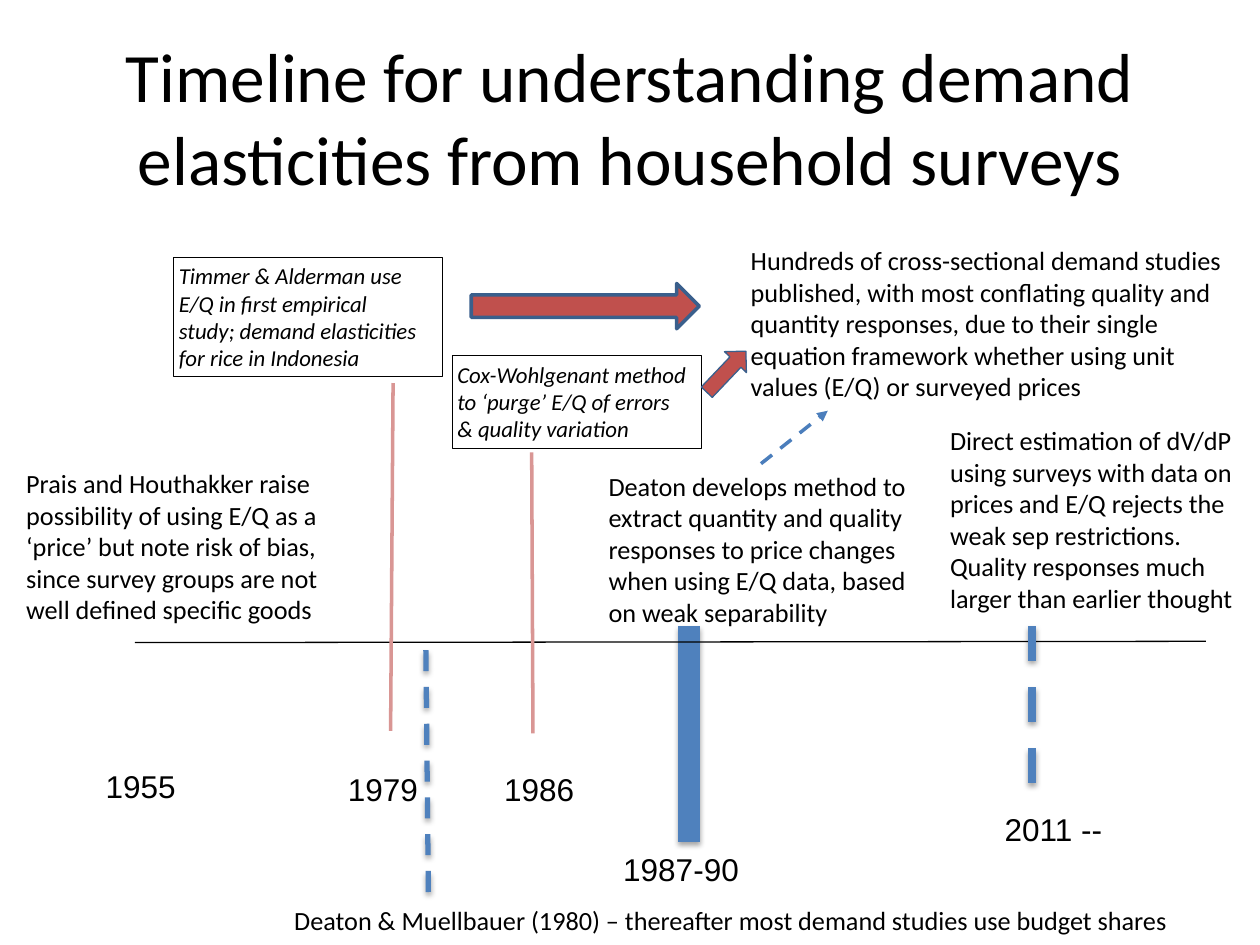
"""Build a timeline slide on demand elasticities from household surveys."""
from dataclasses import dataclass
from typing import Optional

from lxml.etree import SubElement
from pptx import Presentation
from pptx.dml.color import RGBColor
from pptx.enum.dml import MSO_LINE
from pptx.enum.shapes import MSO_CONNECTOR, MSO_SHAPE
from pptx.enum.text import MSO_ANCHOR, MSO_AUTO_SIZE, PP_ALIGN
from pptx.oxml.ns import qn
from pptx.slide import Slide
from pptx.util import Inches, Pt

BLACK = RGBColor(0x00, 0x00, 0x00)
BLUE = RGBColor(0x4F, 0x81, 0xBD)
ARROW_BLUE = RGBColor(0x4B, 0x7E, 0xBC)
OUTLINE_BLUE = RGBColor(0x3A, 0x5F, 0x8C)
RED = RGBColor(0xC0, 0x50, 0x4D)
PINK = RGBColor(0xD9, 0x96, 0x94)


@dataclass
class Label:
    text: str
    left: float
    top: float
    width: float
    height: float
    size: float = 15
    font: str = "Calibri"
    align: PP_ALIGN = PP_ALIGN.LEFT
    anchor: MSO_ANCHOR = MSO_ANCHOR.TOP
    side_margin: float = 0.1
    end_margin: float = 0.05
    wrap: bool = True
    grow: bool = True
    boxed: bool = False


@dataclass
class Line:
    start: tuple[float, float]
    end: tuple[float, float]
    color: RGBColor
    width: float
    dashed: bool = False
    shadow: bool = False
    arrowhead: bool = False


@dataclass
class BlockArrow:
    left: float
    top: float
    width: float
    height: float
    line_width: float
    rotation: float = 0


def year(text: str, left: float, top: float, width: float = 0.76,
         align: PP_ALIGN = PP_ALIGN.CENTER) -> Label:
    return Label(text, left, top, width, 0.4, size=18, font="Arial", align=align, wrap=False)


def boxed_note(text: str, left: float, top: float, width: float, height: float) -> Label:
    return Label(text, left, top, width, height, size=13, side_margin=0.04,
                 end_margin=0.04, boxed=True)


LINES = [
    Line((5.47, 4.97), (5.47, 6.68), BLUE, 12.75, shadow=True),
    Line((1.07, 5.1), (9.57, 5.09), BLACK, 0.75),
    Line((3.1, 5.8), (3.12, 3.04), PINK, 2),
    Line((4.23, 5.82), (4.22, 3.59), PINK, 2),
    Line((6.04, 3.68), (6.57, 3.26), ARROW_BLUE, 2, dashed=True, arrowhead=True),
    Line((8.19, 4.97), (8.19, 6.38), BLUE, 5, dashed=True, shadow=True),
    Line((3.38, 5.16), (3.4, 7.1), BLUE, 3, dashed=True, shadow=True),
]

LABELS = [
    Label("Timeline for understanding demand elasticities from household surveys",
          0.5, 0.3, 9, 1.25, size=39.6, align=PP_ALIGN.CENTER,
          anchor=MSO_ANCHOR.MIDDLE, grow=False),
    Label("Deaton & Muellbauer (1980) – thereafter most demand studies use budget shares ",
          2.22, 7.1, 7.19, 0.4, align=PP_ALIGN.RIGHT, anchor=MSO_ANCHOR.MIDDLE, grow=False),
    year("1955", 0.74, 6.04, align=PP_ALIGN.LEFT),
    year("1979", 2.66, 6.06),
    year("1986", 3.9, 6.06),
    year("1987-90", 4.84, 6.7, 1.13),
    year("2011 --", 7.87, 6.38, 0.98),
    Label("Hundreds of cross-sectional demand studies published, with most conflating "
          "quality and quantity responses, due to their single equation framework "
          "whether using unit values (E/Q) or surveyed prices", 5.86, 1.89, 3.94, 1.36),
    Label("Prais and Houthakker raise possibility of using E/Q as a ‘price’ but note risk "
          "of bias, since survey groups are not well defined specific goods",
          0.11, 3.66, 2.7, 1.36),
    boxed_note("Cox-Wohlgenant method to ‘purge’ E/Q of errors\n& quality variation",
               3.59, 2.82, 1.98, 0.74),
    boxed_note("Timmer & Alderman use\nE/Q in first empirical\n"
               "study; demand elasticities for rice in Indonesia", 1.38, 2.04, 2.13, 0.95),
    Label("Deaton develops method to extract quantity and quality responses to price "
          "changes when using E/Q data, based on weak separability",
          4.79, 3.68, 2.5, 1.36, side_margin=0.04),
    Label("Direct estimation of dV/dP\nusing surveys with data on\n"
          "prices and E/Q rejects the weak sep restrictions. Quality responses much "
          "larger than earlier thought", 7.5, 3.32, 2.5, 1.62, side_margin=0.04),
]

BLOCK_ARROWS = [
    BlockArrow(3.74, 2.25, 1.81, 0.36, 2),
    BlockArrow(5.54, 2.83, 0.45, 0.24, 0.75, rotation=313.6),
]


def draw_line(slide: Slide, line: Line) -> None:
    connector = slide.shapes.add_connector(
        MSO_CONNECTOR.STRAIGHT, *map(Inches, line.start + line.end))
    connector.line.color.rgb = line.color
    connector.line.width = Pt(line.width)
    if line.dashed:
        connector.line.dash_style = MSO_LINE.DASH
    properties = connector._element.spPr
    if line.arrowhead:
        SubElement(properties.find(qn("a:ln")), qn("a:tailEnd"), type="triangle")
    effects = SubElement(properties, qn("a:effectLst"))
    if line.shadow:
        add_shadow(effects)


def add_shadow(effects) -> None:
    shadow = SubElement(effects, qn("a:outerShdw"), blurRad=str(Pt(3.1)),
                        dist=str(Pt(1.8)), dir="5400000", rotWithShape="0")
    color = SubElement(shadow, qn("a:srgbClr"), val=str(BLACK))
    SubElement(color, qn("a:alpha"), val="35000")


def draw_label(slide: Slide, label: Label) -> None:
    shape = slide.shapes.add_textbox(
        *map(Inches, (label.left, label.top, label.width, label.height)))
    if label.boxed:
        shape.line.color.rgb = BLACK
        shape.line.width = Pt(0.5)
    text_frame = shape.text_frame
    text_frame.text = label.text
    text_frame.word_wrap = label.wrap
    text_frame.auto_size = MSO_AUTO_SIZE.SHAPE_TO_FIT_TEXT if label.grow else MSO_AUTO_SIZE.NONE
    text_frame.vertical_anchor = label.anchor
    text_frame.margin_left = text_frame.margin_right = Inches(label.side_margin)
    text_frame.margin_top = text_frame.margin_bottom = Inches(label.end_margin)
    for paragraph in text_frame.paragraphs:
        paragraph.alignment = label.align
        for run in paragraph.runs:
            run.font.name = label.font
            run.font.size = Pt(label.size)
            run.font.italic = True if label.boxed else None
            run.font.color.rgb = BLACK


def draw_block_arrow(slide: Slide, arrow: BlockArrow) -> None:
    shape = slide.shapes.add_shape(
        MSO_SHAPE.RIGHT_ARROW,
        *map(Inches, (arrow.left, arrow.top, arrow.width, arrow.height)))
    shape.rotation = arrow.rotation
    shape.shadow.inherit = False
    shape.fill.solid()
    shape.fill.fore_color.rgb = RED
    shape.line.color.rgb = OUTLINE_BLUE
    shape.line.width = Pt(arrow.line_width)


def main() -> None:
    presentation = Presentation()
    presentation.slide_width = Inches(10)
    presentation.slide_height = Inches(7.5)
    slide = presentation.slides.add_slide(presentation.slide_layouts[6])
    for line in LINES:
        draw_line(slide, line)
    for label in LABELS:
        draw_label(slide, label)
    for arrow in BLOCK_ARROWS:
        draw_block_arrow(slide, arrow)
    presentation.save("out.pptx")


if __name__ == "__main__":
    main()
